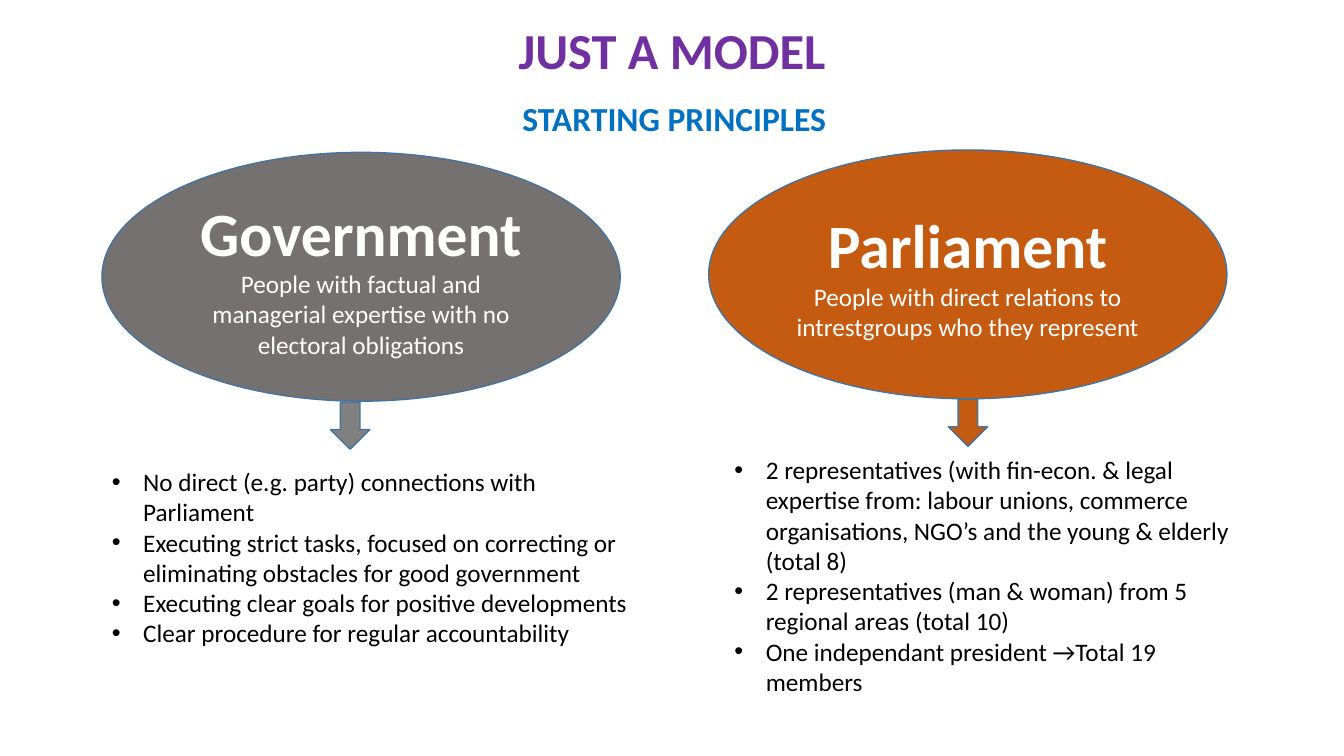
from lxml import etree
from pptx import Presentation
from pptx.dml.color import RGBColor
from pptx.enum.shapes import MSO_SHAPE
from pptx.enum.text import MSO_ANCHOR, PP_ALIGN
from pptx.oxml.ns import qn
from pptx.util import Cm, Pt

OVAL, DOWN_ARROW = MSO_SHAPE.OVAL, MSO_SHAPE.DOWN_ARROW
TOP, MIDDLE, BOTTOM = MSO_ANCHOR.TOP, MSO_ANCHOR.MIDDLE, MSO_ANCHOR.BOTTOM
CENTER, LEFT = PP_ALIGN.CENTER, PP_ALIGN.LEFT

# Content: places are left, top, width, height in cm
COLORS = {
    "purple": "7030A0", "blue": "0070C0", "gray": "767171", "light_gray": "808080",
    "orange": "C55A11", "outline": "43739E", "white": "FFFFFF", "black": "000000",
}
FONT = "Calibri"
HEADINGS = [
    {"text": "JUST A MODEL", "place": (4.24, 0.41, 25.4, 1.75),
     "size": 36, "color": "purple", "anchor": BOTTOM, "before": 0},
    {"text": "STARTING PRINCIPLES", "place": (2.34, 2.46, 29.31, 15.16),
     "size": 24, "color": "blue", "anchor": TOP, "before": 10},
]
BRANCHES = [
    {
        "name": "Government",
        "members": "People with factual and managerial expertise with no electoral obligations",
        "oval": (2.57, 3.84), "oval_color": "gray",
        "arrow": (8.33, 10.13), "arrow_color": "light_gray",
        "list": (2.57, 11.63, 13.69, 4.88),
        "points": [
            "No direct (e.g. party) connections with Parliament",
            "Executing strict tasks, focused on correcting or eliminating obstacles for good government",
            "Executing clear goals for positive developments",
            "Clear procedure for regular accountability",
        ],
    },
    {
        "name": "Parliament",
        "members": "People with direct relations to intrestgroups who they represent",
        "oval": (17.86, 3.78), "oval_color": "orange",
        "arrow": (23.9, 10.06), "arrow_color": "orange",
        "list": (18.26, 11.33, 13.26, 7.19),
        "points": [
            "2 representatives (with fin-econ. & legal expertise from: labour unions, "
            "commerce organisations, NGO’s and the young & elderly (total 8)",
            "2 representatives (man & woman) from 5 regional areas (total 10)",
            "One independant president →Total 19 members",
        ],
    },
]
OVAL_SIZE = (13.06, 6.27)
ARROW_SIZE = (0.99, 1.19)
INDENT = Cm(0.79)


def rgb(name):
    return RGBColor.from_string(COLORS[name])


def write(frame, lines, align):
    """Write one paragraph per (text, size, color, bold) line."""
    frame.word_wrap = True
    paras = []
    for number, (text, size, color, bold) in enumerate(lines):
        para = frame.add_paragraph() if number else frame.paragraphs[0]
        para.alignment = align
        span = para.add_run()
        span.text = text
        span.font.name = FONT
        span.font.size = Pt(size)
        span.font.bold = bold
        span.font.color.rgb = rgb(color)
        paras.append(para)
    return paras


def add_text(page, place, lines, align, anchor=TOP):
    box = page.shapes.add_textbox(*map(Cm, place))
    box.text_frame.vertical_anchor = anchor
    return write(box.text_frame, lines, align)


def add_outlined(page, kind, place, color):
    shape = page.shapes.add_shape(kind, *map(Cm, place))
    shape.shadow.inherit = False
    shape.fill.solid()
    shape.fill.fore_color.rgb = rgb(color)
    shape.line.color.rgb = rgb("outline")
    shape.line.width = Pt(1)
    return shape


def add_bullet(para):
    settings = para._p.get_or_add_pPr()
    settings.set("marL", str(INDENT))
    settings.set("indent", str(-INDENT))
    etree.SubElement(settings, qn("a:buFont")).set("typeface", "Arial")
    etree.SubElement(settings, qn("a:buChar")).set("char", "•")


deck = Presentation()
deck.slide_width, deck.slide_height = Cm(33.87), Cm(19.05)
page = deck.slides.add_slide(deck.slide_layouts[6])

# Title and subtitle
for heading in HEADINGS:
    line = (heading["text"], heading["size"], heading["color"], True)
    para = add_text(page, heading["place"], [line], CENTER, heading["anchor"])[0]
    para.line_spacing = 0.9
    para.space_before = Pt(heading["before"])

# Each branch: oval, arrow and bullet list
for branch in BRANCHES:
    oval = add_outlined(page, OVAL, branch["oval"] + OVAL_SIZE, branch["oval_color"])
    oval.text_frame.vertical_anchor = MIDDLE
    write(oval.text_frame, [(branch["name"], 44, "white", True),
                            (branch["members"], 18, "white", False)], CENTER)
    add_outlined(page, DOWN_ARROW, branch["arrow"] + ARROW_SIZE, branch["arrow_color"])
    lines = [(point, 18, "black", False) for point in branch["points"]]
    for para in add_text(page, branch["list"], lines, LEFT):
        add_bullet(para)

deck.save("out.pptx")
